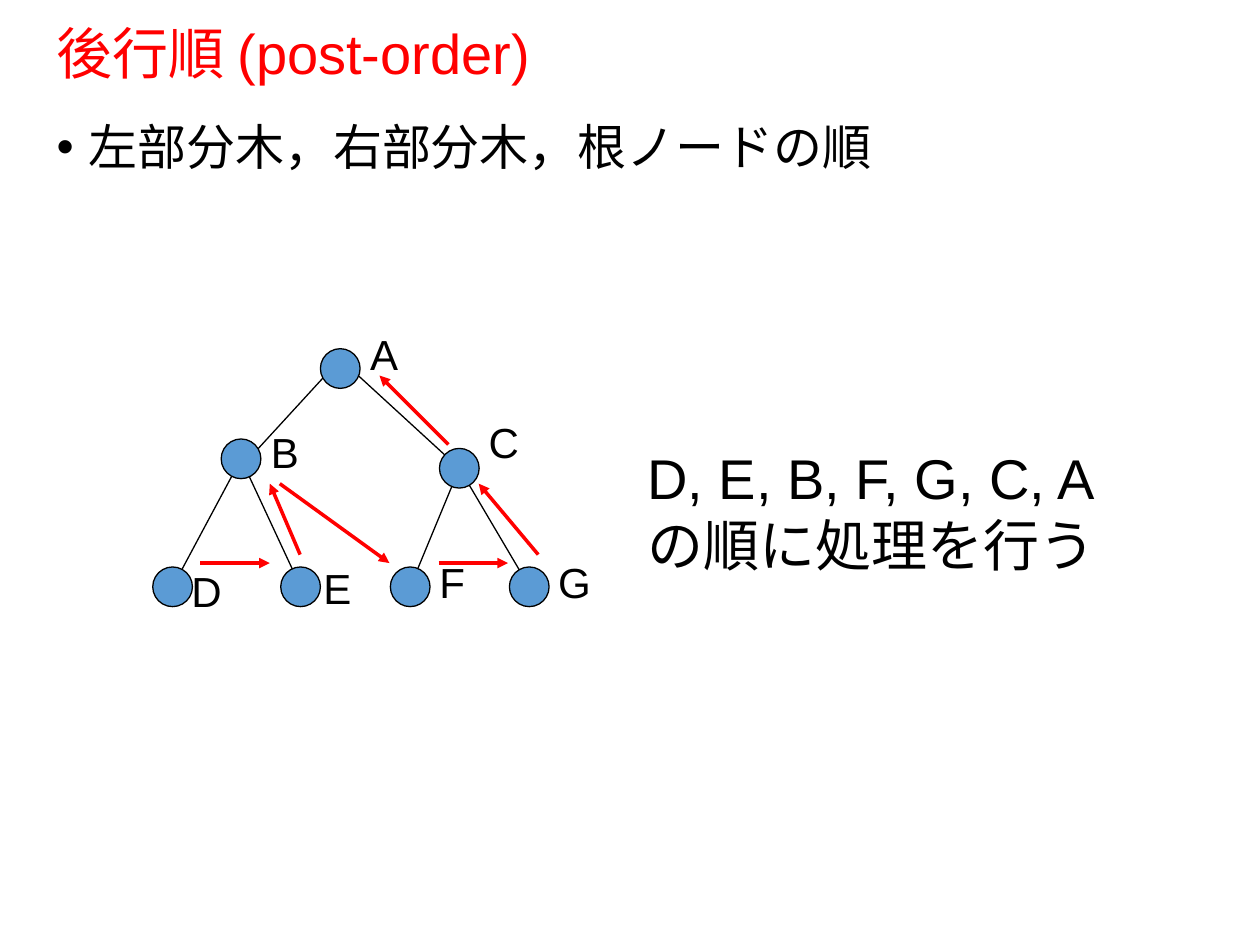
from pptx import Presentation
from pptx.dml.color import RGBColor
from pptx.enum.shapes import MSO_CONNECTOR, MSO_SHAPE
from pptx.enum.text import MSO_ANCHOR, MSO_AUTO_SIZE, PP_ALIGN
from pptx.oxml.ns import qn
from pptx.util import Cm, Pt
from lxml import etree

STRAIGHT = MSO_CONNECTOR.STRAIGHT
OVAL = MSO_SHAPE.OVAL
LEFT = PP_ALIGN.LEFT
TOP, MIDDLE = MSO_ANCHOR.TOP, MSO_ANCHOR.MIDDLE
NO_AUTOFIT = MSO_AUTO_SIZE.NONE
FONT = "Arial"
BLACK, RED, BLUE = "000000", "FF0000", "5B9BD5"

# Tree geometry in cm, relative to the tree's box
NODE_SIZE = 0.8
LABEL_SIZE = (1.1, 1.28)
NODES = {  # name: (centre, label corner)
    "A": ((3.79, 0.93), (4.14, 0)),
    "B": ((1.79, 2.75), (2.14, 1.98)),
    "C": ((6.19, 2.94), (6.53, 1.78)),
    "D": ((0.41, 5.33), (0.54, 4.78)),
    "E": ((2.99, 5.33), (3.2, 4.72)),
    "F": ((5.2, 5.33), (5.54, 4.6)),
    "G": ((7.6, 5.33), (7.93, 4.6)),
}
EDGES = [  # parent, child, vertical shift of each end from the centre
    ("A", "B", -0.19, 0.17), ("A", "C", -0.19, 0),
    ("B", "D", 0, 0), ("B", "E", 0, 0),
    ("C", "F", 0, 0), ("C", "G", 0, 0),
]
VISITS = [  # arrows D-E, E-B, B-F, F-G, G-C, C-A
    ((0.97, 4.85), (2.37, 4.85)), ((2.98, 4.68), (2.37, 3.25)),
    ((2.57, 3.25), (4.78, 4.85)), ((5.77, 4.85), (7.17, 4.85)),
    ((7.78, 4.68), (6.58, 3.25)), ((5.97, 2.46), (4.58, 1.07)),
]


def color(value):
    return RGBColor.from_string(value)


def write_text(frame, text, size, ink=BLACK, anchor=TOP, wrap=True, line_spacing=None):
    frame.auto_size = NO_AUTOFIT
    frame.word_wrap = wrap
    frame.vertical_anchor = anchor
    frame.text = text
    for paragraph in frame.paragraphs:
        paragraph.alignment = LEFT
        paragraph.space_before = Pt(0)
        paragraph.line_spacing = line_spacing
        for run in paragraph.runs:
            run.font.name = FONT
            run.font.size = Pt(size)
            run.font.color.rgb = color(ink)


def place(shape, left, top, width, height):
    shape.left, shape.top = Cm(left), Cm(top)
    shape.width, shape.height = Cm(width), Cm(height)


def add_label(shapes, box, text, **style):
    label = shapes.add_textbox(*map(Cm, box))
    write_text(label.text_frame, text, wrap=False, **style)


def add_line(shapes, start, end, ink, width, arrow=False):
    connector = shapes.add_connector(STRAIGHT, *map(Cm, (*start, *end)))
    connector.line.color.rgb = color(ink)
    connector.line.width = Pt(width)
    if arrow:
        etree.SubElement(connector.line._get_or_add_ln(), qn("a:tailEnd"), type="triangle")
    etree.SubElement(connector._element.spPr, qn("a:effectLst"))


def fill_title(title, box):
    place(title, *box)
    write_text(title.text_frame, "後行順 (post-order)", 32, RED, MIDDLE, line_spacing=0.9)


def fill_body(body, box):
    place(body, *box)
    write_text(body.text_frame, "左部分木，右部分木，根ノードの順", 28, line_spacing=0.9)
    properties = body.text_frame.paragraphs[0]._p.get_or_add_pPr()
    indent = Cm(0.64)
    properties.set("marL", str(indent))
    properties.set("indent", str(-indent))
    etree.SubElement(properties, qn("a:buChar"), char="•")


def add_tree(slide, left, top):
    def at(point, shift=0):
        return left + point[0], top + point[1] + shift

    shapes = slide.shapes.add_group_shape().shapes
    # Edges lie behind the nodes
    for parent, child, start_shift, end_shift in EDGES:
        add_line(shapes, at(NODES[parent][0], start_shift),
                 at(NODES[child][0], end_shift), BLACK, 0.75)
    for center, _ in NODES.values():
        x, y = at(center)
        node = shapes.add_shape(OVAL, Cm(x - NODE_SIZE / 2), Cm(y - NODE_SIZE / 2),
                                Cm(NODE_SIZE), Cm(NODE_SIZE))
        node.shadow.inherit = False
        node.fill.solid()
        node.fill.fore_color.rgb = color(BLUE)
        node.line.color.rgb = color(BLACK)
        node.line.width = Pt(0.75)
    for name, (_, corner) in NODES.items():
        add_label(shapes, (*at(corner), *LABEL_SIZE), name, size=24)
    # Order of the visits
    for start, end in VISITS:
        add_line(slide.shapes, at(start), at(end), RED, 2, arrow=True)


def main():
    presentation = Presentation()
    presentation.slide_width, presentation.slide_height = Cm(25.4), Cm(19.05)
    slide = presentation.slides.add_slide(presentation.slide_layouts[1])
    fill_title(slide.shapes.title, (0.89, 0.48, 23.5, 1.3))
    fill_body(slide.placeholders[1], (0.89, 2.36, 22.17, 3.1))
    add_tree(slide, 3.07, 6.5)
    add_label(slide.shapes, (12.8, 8.81, 9.88, 3),
              "D, E, B, F, G, C, A\nの順に処理を行う", size=32)
    presentation.save("out.pptx")


if __name__ == "__main__":
    main()
